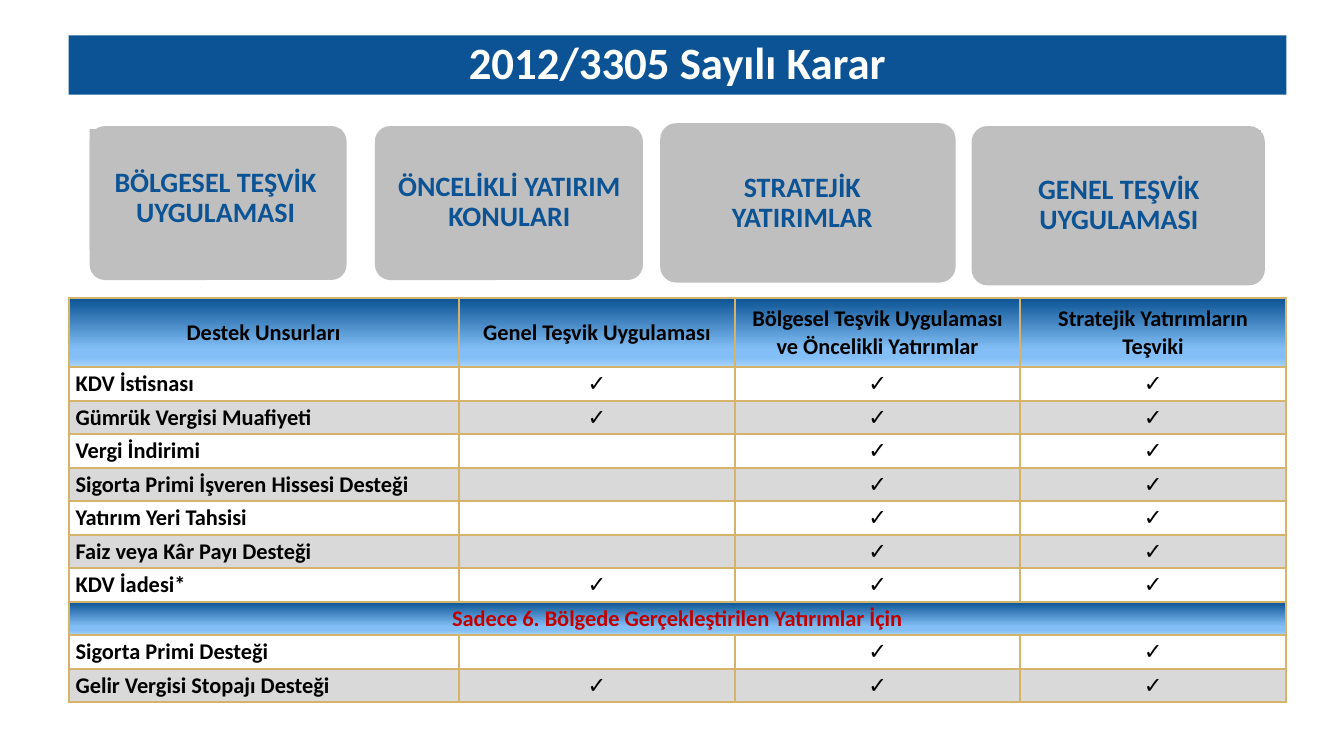
import pptx
import pptx.util
import pptx.dml.color
import pptx.enum.shapes
import pptx.enum.text
import pptx.oxml
import pptx.oxml.ns

Pt = pptx.util.Pt
ALIGN = pptx.enum.text.PP_ALIGN
ANCHOR = pptx.enum.text.MSO_ANCHOR
SHAPE = pptx.enum.shapes.MSO_SHAPE
COLORS = {"navy": "0B5394", "gray": "BFBFBF", "band": "D9D9D9", "white": "FFFFFF",
          "black": "000000", "red": "C00000", "gold": "D6B36A",
          "sky": "83BFF6", "pale": "ACD4F9"}
STOPS = [(0, "navy"), (74, "sky"), (86, "sky"), (100, "pale")]
CARDS = [
    ("ÖNCELİKLİ YATIRIM KONULARI", (267.8, 90, 191.5, 110), (271.4, 93, 185, 103.7), 5.8),
    ("STRATEJİK YATIRIMLAR", (471.6, 88, 211, 113.8), (475.2, 91.4, 195.8, 107.3), 5.8),
    ("GENEL TEŞVİK UYGULAMASI", (694, 90, 209.5, 113.8), (697.7, 93, 203, 107.3), 5.8),
    ("BÖLGESEL TEŞVİK UYGULAMASI", (64, 90, 183.6, 110), (64, 92.2, 180, 85.7), 19.5),
]
HEADERS = ["Destek Unsurları", "Genel Teşvik Uygulaması",
           "Bölgesel Teşvik Uygulaması ve Öncelikli Yatırımlar",
           "Stratejik Yatırımların Teşviki"]
SUPPORTS = [
    ("KDV İstisnası", True), ("Gümrük Vergisi Muafiyeti", True), ("Vergi İndirimi", False),
    ("Sigorta Primi İşveren Hissesi Desteği", False), ("Yatırım Yeri Tahsisi", False),
    ("Faiz veya Kâr Payı Desteği", False), ("KDV İadesi*", True),
]
REGION_TITLE = "Sadece 6. Bölgede Gerçekleştirilen Yatırımlar İçin"
REGION_SUPPORTS = [("Sigorta Primi Desteği", False), ("Gelir Vergisi Stopajı Desteği", True)]


def rgb(name):
    return pptx.dml.color.RGBColor.from_string(COLORS[name])


def write(tf, text, size=16, color="black", bold=True, align=ALIGN.CENTER, spacing=None):
    p = tf.paragraphs[0]
    p.alignment = align
    p.line_spacing = spacing
    r = p.add_run()
    r.text = text
    r.font.name = "Calibri"
    r.font.size = Pt(size)
    r.font.bold = bold
    r.font.color.rgb = rgb(color)


class Deck:
    """Holds the style and the current slide and draws its elements."""

    def __init__(self, prs):
        self.s = prs.slides.add_slide(prs.slide_layouts[5])

    def title(self, text, box):
        sp = self.s.shapes.title
        sp.left, sp.top, sp.width, sp.height = map(Pt, box)
        sp.fill.solid()
        sp.fill.fore_color.rgb = rgb("navy")
        tf = sp.text_frame
        tf.auto_size = pptx.enum.text.MSO_AUTO_SIZE.NONE
        tf.vertical_anchor = ANCHOR.MIDDLE
        write(tf, text, size=32, color="white", spacing=0.9)

    def block(self, parent, kind, box):
        sp = parent.shapes.add_shape(kind, *map(Pt, box))
        sp.shadow.inherit = False
        sp.fill.solid()
        sp.fill.fore_color.rgb = rgb("gray")
        sp.line.fill.background()
        return sp

    def card(self, text, panel, label, top):
        group = self.s.shapes.add_group_shape()
        self.block(group, SHAPE.ROUNDED_RECTANGLE, panel).adjustments[0] = 0.1
        tf = self.block(group, SHAPE.RECTANGLE, label).text_frame
        tf.word_wrap = True
        tf.vertical_anchor = ANCHOR.MIDDLE
        tf.margin_left = tf.margin_right = tf.margin_bottom = Pt(5.8)
        tf.margin_top = Pt(top)
        write(tf, text, size=20, color="navy", spacing=0.9)

    def table(self, rows, box, widths, heights):
        frame = self.s.shapes.add_table(len(rows), len(widths), *map(Pt, box))
        tbl = frame.table
        tbl.first_row = tbl.horz_banding = False
        for col, width in zip(tbl.columns, widths):
            col.width = Pt(width)
        for row, height in zip(tbl.rows, heights):
            row.height = Pt(height)
        for i, (fill, texts) in enumerate(rows):
            for j in range(len(widths)):
                self.cell(tbl.cell(i, j), fill)
            if len(texts) == 1:
                tbl.cell(i, 0).merge(tbl.cell(i, len(widths) - 1))
            for j, (text, style) in enumerate(texts):
                if text:
                    write(tbl.cell(i, j).text_frame, text, **style)

    def cell(self, cell, fill):
        cell.margin_left = cell.margin_right = Pt(5)
        cell.margin_top = cell.margin_bottom = 0
        cell.vertical_anchor = ANCHOR.MIDDLE
        ns = pptx.oxml.ns.nsdecls("a")
        tcPr = cell._tc.get_or_add_tcPr()
        for side in "LRTB":
            tcPr.append(pptx.oxml.parse_xml(
                f'<a:ln{side} {ns} w="{Pt(1.5)}"><a:solidFill>'
                f'<a:srgbClr val="{COLORS["gold"]}"/></a:solidFill></a:ln{side}>'))
        if fill == "gradient":
            stops = "".join(f'<a:gs pos="{pos * 1000}"><a:srgbClr val="{COLORS[name]}"/></a:gs>'
                            for pos, name in STOPS)
            tcPr.append(pptx.oxml.parse_xml(
                f'<a:gradFill {ns}><a:gsLst>{stops}</a:gsLst>'
                '<a:lin ang="5400000" scaled="0"/></a:gradFill>'))
        else:
            cell.fill.solid()
            cell.fill.fore_color.rgb = rgb(fill)


def support_rows(supports):
    rows = []
    for i, (name, general) in enumerate(supports):
        marks = ["✓" if general else "", "✓", "✓"]
        rows.append((("white", "band")[i % 2],
                     [(name, {"align": ALIGN.LEFT})] + [(m, {"bold": False}) for m in marks]))
    return rows


def main():
    prs = pptx.Presentation()
    prs.slide_width, prs.slide_height = Pt(960), Pt(540)
    deck = Deck(prs)
    deck.title("2012/3305 Sayılı Karar", (49, 25.2, 869.8, 42.4))
    for card in CARDS:
        deck.card(*card)
    rows = [("gradient", [(text, {}) for text in HEADERS])]
    rows += support_rows(SUPPORTS)
    rows.append(("gradient", [(REGION_TITLE, {"color": "red"})]))
    rows += support_rows(REGION_SUPPORTS)
    deck.table(rows, (49, 213, 869.8, 288.7), [278.6, 197.7, 203.3, 190.2],
               [49.4] + [23.93] * (len(rows) - 1))
    prs.save("out.pptx")


if __name__ == "__main__":
    main()
